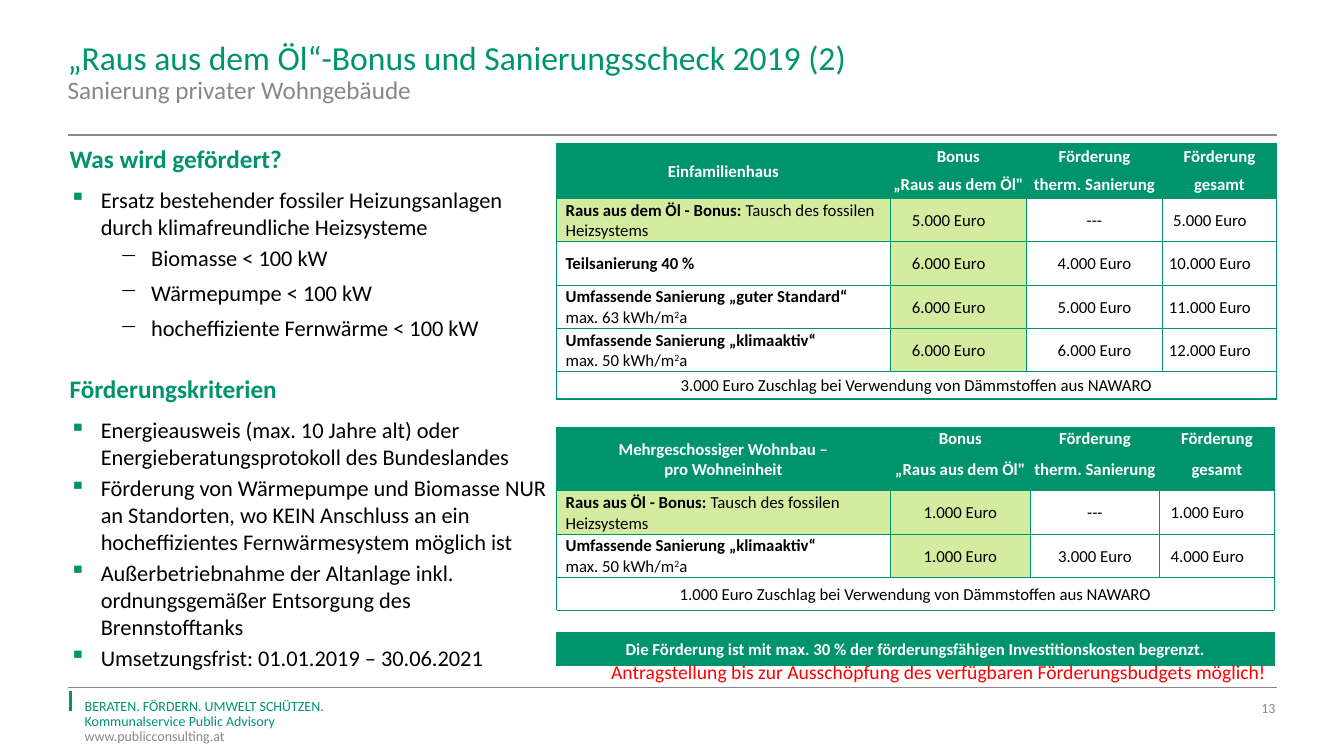
from copy import deepcopy

from lxml import etree
from pptx import Presentation
from pptx.dml.color import RGBColor
from pptx.enum.shapes import MSO_CONNECTOR
from pptx.enum.text import MSO_ANCHOR, PP_ALIGN
from pptx.oxml.ns import qn
from pptx.util import Inches, Pt

LINE = MSO_CONNECTOR.STRAIGHT
TOP, MIDDLE = MSO_ANCHOR.TOP, MSO_ANCHOR.MIDDLE
LEFT, CENTER, RIGHT = PP_ALIGN.LEFT, PP_ALIGN.CENTER, PP_ALIGN.RIGHT

GREEN, LIGHT, GREY = "00946C", "D4ECA0", "87888A"
BLACK, WHITE, RED = "000000", "FFFFFF", "FF0000"


def rgb(code):
    return RGBColor.from_string(code)


class Sheet:
    font = "Calibri"

    def __init__(self, slide):
        self.slide = slide

    def style(self, run, size, color, bold=False):
        font = run.font
        font.name, font.size, font.bold = self.font, Pt(size), bold
        font.color.rgb = rgb(color)

    def put(self, para, parts, size, color, bold=False, align=LEFT):
        """Parts are a string, or pairs of text and a mark: "b", "sup" or ""."""
        para.alignment = align
        if isinstance(parts, str):
            para.text = parts.replace("\n", "\v")
            for run in para.runs:
                self.style(run, size, color, bold)
        else:
            for text, mark in parts:
                run = para.add_run()
                run.text = text.rstrip("\n")
                self.style(run, size, color, mark == "b")
                if mark == "sup":
                    run.font._element.set("baseline", "30000")
                if text.endswith("\n"):
                    para.add_line_break()
        # Line breaks take the size of the text
        for br in para._p.findall(qn("a:br")):
            br.append(deepcopy(para.runs[0].font._element))

    def rule(self, x1, y1, x2, y2, color, width):
        line = self.slide.shapes.add_connector(
            LINE, Inches(x1), Inches(y1), Inches(x2), Inches(y2))
        line.line.color.rgb = rgb(color)
        line.line.width = Pt(width)
        etree.SubElement(line._element.spPr, qn("a:effectLst"))

    def box(self, x, y, w, h, inset=(0, 0), anchor=TOP, wrap=True):
        shape = self.slide.shapes.add_textbox(
            Inches(x), Inches(y), Inches(w), Inches(h))
        frame = shape.text_frame
        frame.word_wrap, frame.vertical_anchor = wrap, anchor
        frame.margin_left = frame.margin_right = Inches(inset[0])
        frame.margin_top = frame.margin_bottom = Inches(inset[1])
        return frame

    def label(self, place, text, size, color, align=LEFT, **kind):
        frame = self.box(*place, **kind)
        self.put(frame.paragraphs[0], text, size, color, align=align)
        return frame

    def bullet(self, para, sign, indent, color):
        props = para._p.get_or_add_pPr()
        props.set("marL", str(Inches(indent)))
        props.set("indent", str(-Inches(0.31)))
        tint = etree.SubElement(props, qn("a:buClr"))
        etree.SubElement(tint, qn("a:srgbClr")).set("val", color)
        etree.SubElement(props, qn("a:buChar")).set("char", sign)

    def cell(self, cell, parts, fill, color=BLACK, bold=False, align=CENTER,
             left=0.01, right=0.01):
        cell.fill.solid()
        cell.fill.fore_color.rgb = rgb(fill)
        cell.vertical_anchor = MIDDLE
        cell.margin_left, cell.margin_right = Inches(left), Inches(right)
        cell.margin_top, cell.margin_bottom = Inches(0.01), 0
        paras = parts if isinstance(parts, tuple) else (parts,)
        frame = cell.text_frame
        for i, part in enumerate(paras):
            para = frame.add_paragraph() if i else frame.paragraphs[0]
            self.put(para, part, 12, color, bold, align)

    def edge(self, cell, sides):
        props = cell._tc.get_or_add_tcPr()
        for i, side in enumerate(sides):
            line = etree.Element(qn("a:ln" + side), w=str(Pt(1)))
            paint = etree.SubElement(line, qn("a:solidFill"))
            etree.SubElement(paint, qn("a:srgbClr")).set("val", GREEN)
            props.insert(i, line)

    def grid(self, x, y, widths, heights, title, body, extra, shift, limit=None):
        rows, cols = len(heights), len(widths)
        table = self.slide.shapes.add_table(
            rows, cols, Inches(x), Inches(y),
            Inches(sum(widths)), Inches(sum(heights))).table
        table.first_row = table.horz_banding = False
        for col, width in zip(table.columns, widths):
            col.width = Inches(width)
        for row, height in zip(table.rows, heights):
            row.height = Inches(height)
        # Header in two rows
        table.cell(0, 0).merge(table.cell(1, 0))
        self.cell(table.cell(0, 0), title, GREEN, WHITE, True)
        for r, names in enumerate(HEADS):
            for c, name in enumerate(names, 1):
                self.cell(table.cell(r, c), name, GREEN, WHITE, True)
        # Measures and amounts
        for r, (name, *sums) in enumerate(body, 2):
            self.cell(table.cell(r, 0), name, LIGHT if r == 2 else WHITE,
                      align=LEFT, left=0.09)
            for c, amount in enumerate(sums, 1):
                moved = c in shift and amount != "---"
                self.cell(table.cell(r, c), amount, LIGHT if c == 1 else WHITE,
                          right=0.2 if moved else 0.01)
        # Full-width rows
        last = len(body) + 2
        wide = [(extra, WHITE, BLACK, False)]
        if limit:
            wide += [("", WHITE, BLACK, False), (limit, GREEN, WHITE, True)]
        for r, (text, *look) in enumerate(wide, last):
            table.cell(r, 0).merge(table.cell(r, cols - 1))
            self.cell(table.cell(r, 0), text, *look)
        for r in range(rows):
            for c in range(cols):
                cell = table.cell(r, c)
                self.edge(cell, "TB" if r == last + 1 else "LRTB")
                para = cell.text_frame.paragraphs[0]
                if not para.runs:
                    etree.SubElement(para._p, qn("a:endParaRPr")).set("sz", "1200")


HEADS = [("Bonus", "Förderung", "Förderung"),
         ("„Raus aus dem Öl\"", "therm. Sanierung", "gesamt")]


def swap(name):
    return [(name + " - Bonus: ", "b"), ("Tausch des fossilen Heizsystems", "")]


def full(grade, need):
    return [(f"Umfassende Sanierung „{grade}“\n", "b"),
            (f"max. {need} kWh/m", ""), ("2", "sup"), ("a", "")]


def main():
    deck = Presentation()
    deck.slide_width, deck.slide_height = Inches(13.33), Inches(7.5)
    sheet = Sheet(deck.slides.add_slide(deck.slide_layouts[6]))

    # Rules and footer
    for y in (1.34, 6.82):
        sheet.rule(0.67, y, 12.67, y, GREY, 1)
    sheet.rule(0.7, 6.86, 0.7, 7.05, GREEN, 2)
    foot = sheet.label(
        (0.84, 6.94, 2.41, 0.45),
        "BERATEN. FÖRDERN. UMWELT SCHÜTZEN.\nKommunalservice Public Advisory",
        10, GREEN, wrap=False)
    sheet.put(foot.add_paragraph(), "www.publicconsulting.at", 10, GREY)
    for para in foot.paragraphs:
        para.line_spacing = 0.9
    sheet.label((12.38, 6.94, 0.27, 0.17), "13", 10, GREY, RIGHT, anchor=MIDDLE)

    # Title
    sheet.label((0.67, 0.37, 9.15, 0.4),
                "„Raus aus dem Öl“-Bonus und Sanierungsscheck 2019 (2)", 24, GREEN)
    sheet.label((0.67, 0.74, 9.15, 0.3), "Sanierung privater Wohngebäude", 18, GREY)

    # Tables
    sheet.grid(
        5.52, 1.42, [3.31, 1.35, 1.35, 1.13], [0.27, 0.28] + [0.43] * 4 + [0.27],
        "Einfamilienhaus",
        [(swap("Raus aus dem Öl"), "5.000 Euro", "---", "5.000 Euro"),
         ([("Teilsanierung 40 %", "b")],
          "6.000 Euro", "4.000 Euro", "10.000 Euro"),
         (full("guter Standard", 63), "6.000 Euro", "5.000 Euro", "11.000 Euro"),
         (full("klimaaktiv", 50), "6.000 Euro", "6.000 Euro", "12.000 Euro")],
        "3.000 Euro Zuschlag bei Verwendung von Dämmstoffen aus NAWARO", (1, 3))
    sheet.grid(
        5.52, 4.24, [3.31, 1.39, 1.28, 1.14],
        [0.21, 0.42, 0.43, 0.43, 0.33, 0.22, 0.32],
        ("Mehrgeschossiger Wohnbau –", "pro Wohneinheit"),
        [(swap("Raus aus Öl"), "1.000 Euro", "---", "1.000 Euro"),
         (full("klimaaktiv", 50), "1.000 Euro", "3.000 Euro", "4.000 Euro")],
        "1.000 Euro Zuschlag bei Verwendung von Dämmstoffen aus NAWARO", (3,),
        "Die Förderung ist mit max. 30 % der förderungsfähigen "
        "Investitionskosten begrenzt.")

    # Funding and criteria
    items = [
        ("head", "Was wird gefördert?"),
        ("▪", "Ersatz bestehender fossiler Heizungsanlagen durch "
              "klimafreundliche Heizsysteme"),
        ("−", "Biomasse < 100 kW"),
        ("−", "Wärmepumpe < 100 kW"),
        ("−", "hocheffiziente Fernwärme < 100 kW"),
        ("head", "Förderungskriterien"),
        ("▪", "Energieausweis (max. 10 Jahre alt) oder "
              "Energieberatungsprotokoll des Bundeslandes"),
        ("▪", "Förderung von Wärmepumpe und Biomasse NUR an Standorten, wo KEIN "
              "Anschluss an ein hocheffizientes Fernwärmesystem möglich ist"),
        ("▪", "Außerbetriebnahme der Altanlage inkl. ordnungsgemäßer "
              "Entsorgung des Brennstofftanks"),
        ("▪", "Umsetzungsfrist: 01.01.2019 – 30.06.2021")]
    frame = sheet.box(0.69, 1.42, 4.74, 5.28)
    for i, (kind, text) in enumerate(items):
        para = frame.add_paragraph() if i else frame.paragraphs[0]
        if kind == "head":
            sheet.put(para, text, 18, GREEN, True)
            para.space_before, para.space_after = Pt(20 if i else 0), Pt(6)
        else:
            sub = kind == "−"
            sheet.bullet(para, kind, 0.81 if sub else 0.31, BLACK if sub else GREEN)
            sheet.put(para, text, 16, BLACK)
            para.space_before, para.space_after = Pt(3), Pt(3 if sub else 0)

    # Deadline note
    sheet.label((5.06, 6.5, 7.6, 0.34),
                "Antragstellung bis zur Ausschöpfung des verfügbaren "
                "Förderungsbudgets möglich!", 14, RED, RIGHT, inset=(0.1, 0.05))

    deck.save("out.pptx")


if __name__ == "__main__":
    main()
